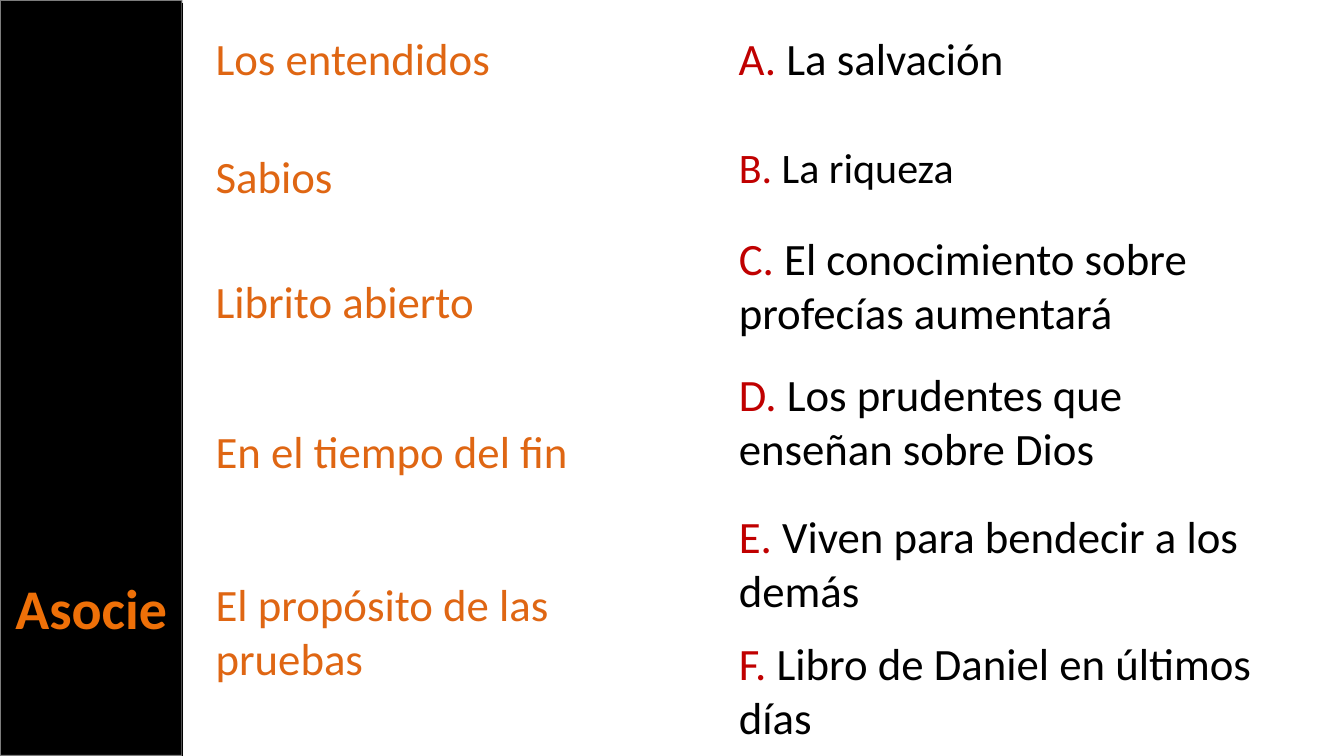
from lxml import etree
from pptx import Presentation
from pptx.dml.color import RGBColor
from pptx.enum.shapes import MSO_CONNECTOR, MSO_SHAPE
from pptx.enum.text import MSO_AUTO_SIZE, PP_ALIGN
from pptx.oxml.ns import qn
from pptx.util import Pt

RECT = MSO_SHAPE.RECTANGLE
STRAIGHT = MSO_CONNECTOR.STRAIGHT
GROW = MSO_AUTO_SIZE.SHAPE_TO_FIT_TEXT
LEFT, CENTER = PP_ALIGN.LEFT, PP_ALIGN.CENTER

COLORS = {
    "black": "000000",
    "border": "F9F9F9",
    "term": "DF6613",
    "letter": "C00000",
    "title": "EE7008",
}
WIDTH, HEIGHT = 960, 540
BAR_W = 130.3
TERM_X, ANSWER_X = 146.9, 520.6


class MatchingSlide:
    """Holds the style and the current slide; all lengths are in points."""

    def __init__(self, slide, font="Calibri", size=32):
        self.slide = slide
        self.font = font
        self.size = size

    def color(self, name):
        return RGBColor.from_string(COLORS[name])

    def bar(self, x, y, w, h, fill, line, weight, opacity):
        sp = self.slide.shapes.add_shape(RECT, Pt(x), Pt(y), Pt(w), Pt(h))
        sp.shadow.inherit = False
        sp.fill.solid()
        sp.fill.fore_color.rgb = self.color(fill)
        sp.line.color.rgb = self.color(line)
        sp.line.width = Pt(weight)
        clr = sp.element.spPr.find(qn("a:ln")).find(".//" + qn("a:srgbClr"))
        etree.SubElement(clr, qn("a:alpha")).set("val", str(opacity * 1000))

    def text(self, x, y, w, h, runs, size=None, bold=False, align=LEFT):
        sp = self.slide.shapes.add_textbox(Pt(x), Pt(y), Pt(w), Pt(h))
        tf = sp.text_frame
        tf.word_wrap = True
        tf.auto_size = GROW
        p = tf.paragraphs[0]
        p.alignment = align
        for text, color in runs:
            r = p.add_run()
            r.text = text
            r.font.name = self.font
            r.font.size = Pt(size or self.size)
            r.font.bold = bold
            r.font.color.rgb = self.color(color)

    def line(self, x1, y1, x2, y2, color, weight):
        cn = self.slide.shapes.add_connector(
            STRAIGHT, Pt(x1), Pt(y1), Pt(x2), Pt(y2))
        cn.line.color.rgb = self.color(color)
        cn.line.width = Pt(weight)
        etree.SubElement(cn.element.spPr, qn("a:effectLst"))


# Text, top, width, height
TERMS = [
    ("Los entendidos", 18.7, 330.5, 46),
    ("Sabios", 103, 276.5, 46),
    ("Librito abierto", 192.2, 297.4, 46),
    ("En el tiempo del fin", 298.8, 316, 46),
    ("El propósito de las pruebas", 408.2, 330.5, 85),
]

# Text, top, width, height, size
ANSWERS = [
    ("La salvación", 18.7, 417.6, 46, 32),
    ("La riqueza", 97.9, 301, 44, 30),
    ("El conocimiento sobre profecías aumentará", 161.3, 375.1, 85, 32),
    ("Los prudentes que enseñan sobre Dios", 258.5, 389.5, 85, 32),
    ("Viven para bendecir a los demás", 360, 402.5, 85, 32),
    ("Libro de Daniel en últimos días", 450.7, 402.5, 85, 32),
]


def main():
    prs = Presentation()
    prs.slide_width, prs.slide_height = Pt(WIDTH), Pt(HEIGHT)
    s = MatchingSlide(prs.slides.add_slide(prs.slide_layouts[6]))

    # Side bar
    s.bar(0, 0, BAR_W, HEIGHT, "black", "border", 1.35, 50)

    # Terms to match
    for text, y, w, h in TERMS:
        s.text(TERM_X, y, w, h, [(text, "term")])

    # Lettered answers
    for letter, (text, y, w, h, size) in zip("ABCDEF", ANSWERS):
        runs = [(f"{letter}. ", "letter"), (text, "black")]
        s.text(ANSWER_X, y, w, h, runs, size)

    # Title and bar edge
    s.text(0, 406.1, BAR_W, 55.7, [("Asocie", "title")], 40, True, CENTER)
    s.line(BAR_W, 2.2, BAR_W, HEIGHT, "black", 0.85)

    prs.save("out.pptx")


if __name__ == "__main__":
    main()
